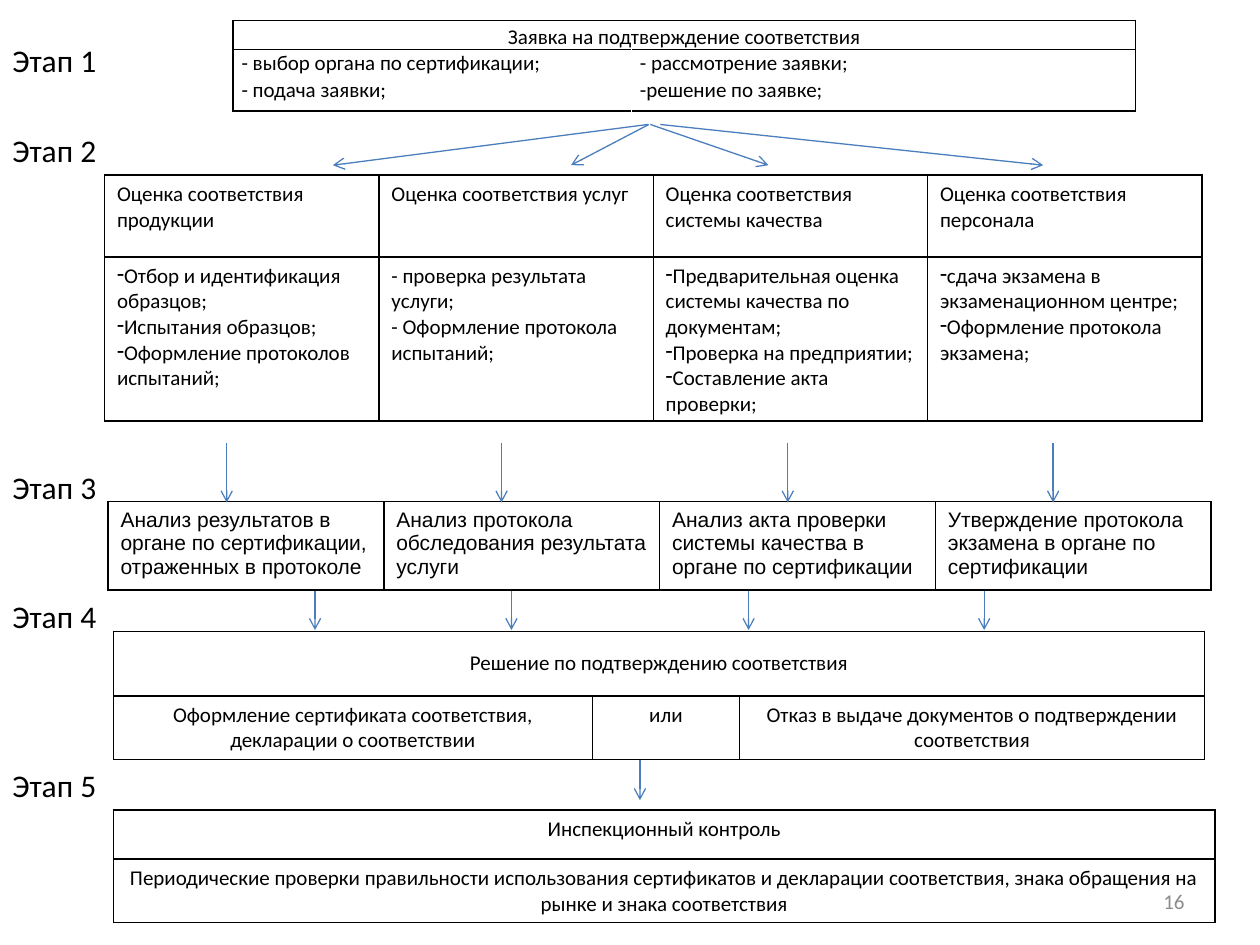
from lxml.etree import SubElement
from pptx import Presentation
from pptx.dml.color import RGBColor
from pptx.enum.shapes import MSO_CONNECTOR
from pptx.enum.text import MSO_ANCHOR, PP_ALIGN
from pptx.oxml.ns import qn
from pptx.util import Cm, Pt

COLORS = {"black": "000000", "white": "FFFFFF", "arrow": "4B7EBC", "number": "8C8C8C"}

STAGES = [("Этап 1", 0.71), ("Этап 2", 2.51), ("Этап 3", 9.32), ("Этап 4", 11.91), ("Этап 5", 15.32)]

APPLICATION = {
    "at": (4.7, 0.41), "columns": [8.03, 10.16], "rows": [0.58, 1.24],
    "margins": (0.17, 0), "spacing": [1.15, 1.05], "title": True, "open_middle": True,
    "cells": [
        [["Заявка на подтверждение соответствия"]],
        [["- выбор органа по сертификации;", "- подача заявки;"],
         ["- рассмотрение заявки;", "-решение по заявке;"]],
    ],
}
ASSESSMENT = {
    "at": (2.11, 3.53), "columns": [5.53] * 4, "rows": [1.65, 3.3], "bullets": True,
    "cells": [
        [["Оценка соответствия продукции"], ["Оценка соответствия услуг"],
         ["Оценка соответствия системы качества"], ["Оценка соответствия персонала"]],
        [["-Отбор и идентификация образцов;", "-Испытания образцов;",
          "-Оформление протоколов испытаний;"],
         ["- проверка результата услуги;", "- Оформление протокола испытаний;"],
         ["-Предварительная оценка системы качества по документам;",
          "-Проверка на предприятии;", "-Составление акта проверки;"],
         ["-сдача экзамена в экзаменационном центре;", "-Оформление протокола экзамена;"]],
    ],
}
ANALYSIS = {
    "at": (2.18, 10.11), "columns": [5.56] * 4, "rows": [1.78], "font": "Arial",
    "cells": [
        [["Анализ результатов в органе по сертификации, отраженных в протоколе"],
         ["Анализ протокола обследования результата услуги"],
         ["Анализ акта проверки системы качества в органе по сертификации"],
         ["Утверждение протокола экзамена в органе по сертификации"]],
    ],
}
DECISION = {
    "at": (2.29, 12.73), "columns": [9.65, 2.97, 9.37], "rows": [1.3, 1.27],
    "centered": True, "title": True,
    "cells": [
        [["Решение по подтверждению соответствия"]],
        [["Оформление сертификата соответствия, декларации о соответствии"], ["или"],
         ["Отказ в выдаче документов о подтверждении соответствия"]],
    ],
}
INSPECTION = {
    "at": (2.29, 16.33), "columns": [22.2], "rows": [0.99, 1.27], "centered": True,
    "cells": [
        [["Инспекционный контроль"]],
        [["Периодические проверки правильности использования сертификатов и декларации "
          "соответствия, знака обращения на рынке и знака соответствия"]],
    ],
}

FAN_ARROWS = [(13.06, 6.71), (13.31, 21.03), (13.08, 11.51), (13.11, 15.49)]
FAN_LEVELS = (2.51, 3.33)
DOWN_ARROWS = [
    ((8.94, 10.13), [4.57, 10.11, 15.88, 21.23]),
    ((11.91, 12.7), [6.35, 10.31, 15.09, 19.84]),
    ((15.32, 16.13), [12.9]),
]


def style(paragraph, size, color="black", font="Calibri"):
    paragraph.font.size = Pt(size)
    paragraph.font.name = font
    paragraph.font.bold = False
    paragraph.font.color.rgb = RGBColor.from_string(COLORS[color])


def add_border(cell, side, color):
    line = SubElement(cell._tc.get_or_add_tcPr(), qn(f"a:ln{side}"), w=str(Pt(1)))
    fill = SubElement(line, qn("a:solidFill"))
    SubElement(fill, qn("a:srgbClr"), val=COLORS[color])


def fill_cell(cell, lines, data, is_title, row):
    cell.margin_left = cell.margin_right = Cm(data.get("margins", (0.25, 0.13))[0])
    cell.margin_top = cell.margin_bottom = Cm(data.get("margins", (0.25, 0.13))[1])
    if is_title and data.get("centered"):
        cell.vertical_anchor = MSO_ANCHOR.MIDDLE
    frame = cell.text_frame
    for index, text in enumerate(lines):
        paragraph = frame.add_paragraph() if index else frame.paragraphs[0]
        bulleted = data.get("bullets") and text.startswith("-") and not text.startswith("- ")
        paragraph.text = text[1:] if bulleted else text
        style(paragraph, 12, font=data.get("font", "Calibri"))
        if is_title or data.get("centered"):
            paragraph.alignment = PP_ALIGN.CENTER
        if "spacing" in data:
            paragraph.line_spacing = data["spacing"][row]
            paragraph.space_after = Pt(10 if is_title else 0)
        if bulleted:
            properties = paragraph._p.get_or_add_pPr()
            properties.set("marL", "0")
            properties.set("indent", "0")
            bullet = properties.makeelement(qn("a:buChar"), {"char": "-"})
            properties.insert(0, bullet)


def add_grid(page, data):
    columns, rows = data["columns"], data["rows"]
    left, top = data["at"]
    frame = page.shapes.add_table(len(rows), len(columns), Cm(left), Cm(top),
                                  Cm(sum(columns)), Cm(sum(rows)))
    table = frame.table
    table.first_row = table.horz_banding = False
    for column, width in zip(table.columns, columns):
        column.width = Cm(width)
    for row, height in zip(table.rows, rows):
        row.height = Cm(height)
    if data.get("title"):
        table.cell(0, 0).merge(table.cell(0, len(columns) - 1))
    for r in range(len(rows)):
        for c in range(len(columns)):
            cell = table.cell(r, c)
            is_open = data.get("open_middle") and r == 1
            for side in "LRTB":
                inner = (side, c) in (("R", 0), ("L", 1))
                add_border(cell, side, "white" if is_open and inner else "black")
            cell.fill.background()
            if c < len(data["cells"][r]):
                fill_cell(cell, data["cells"][r][c], data, data.get("title") and r == 0, r)


def add_arrow(page, x1, y1, x2, y2):
    arrow = page.shapes.add_connector(MSO_CONNECTOR.STRAIGHT, Cm(x1), Cm(y1), Cm(x2), Cm(y2))
    arrow.line.color.rgb = RGBColor.from_string(COLORS["arrow"])
    arrow.line.width = Pt(0.75)
    SubElement(arrow.line._get_or_add_ln(), qn("a:tailEnd"), type="arrow")
    SubElement(arrow._element.spPr, qn("a:effectLst"))


def add_text(page, text, left, top, width, size, color="black"):
    box = page.shapes.add_textbox(Cm(left), Cm(top), Cm(width), Cm(1.02))
    box.text_frame.word_wrap = True
    paragraph = box.text_frame.paragraphs[0]
    paragraph.text = text
    style(paragraph, size, color)
    return box.text_frame


def main():
    deck = Presentation()
    deck.slide_width, deck.slide_height = Cm(25.4), Cm(19.05)
    page = deck.slides.add_slide(deck.slide_layouts[6])

    number = add_text(page, "16", 18.2, 17.66, 5.93, 12, "number")
    number.vertical_anchor = MSO_ANCHOR.MIDDLE
    number.paragraphs[0].alignment = PP_ALIGN.RIGHT

    for data in (APPLICATION, ASSESSMENT, ANALYSIS, DECISION, INSPECTION):
        add_grid(page, data)
    for start, end in FAN_ARROWS:
        add_arrow(page, start, FAN_LEVELS[0], end, FAN_LEVELS[1])
    for (top, bottom), positions in DOWN_ARROWS:
        for x in positions:
            add_arrow(page, x, top, x, bottom)
    for label, top in STAGES:
        add_text(page, label, 0, top, 2.9, 18)
    deck.save("out.pptx")


if __name__ == "__main__":
    main()
